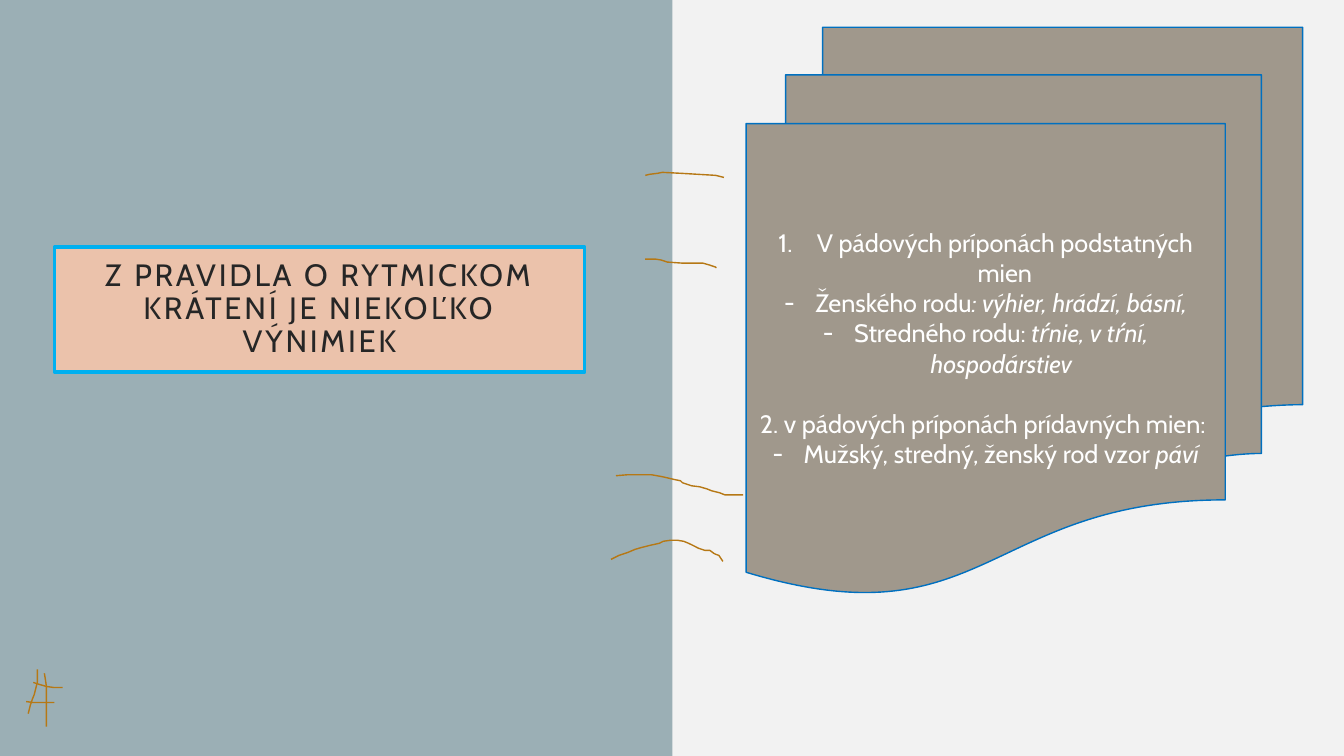
from pptx import Presentation
from pptx.dml.color import RGBColor
from pptx.enum.shapes import MSO_SHAPE as SHAPE
from pptx.enum.text import MSO_ANCHOR as ANCHOR, PP_ALIGN as ALIGN
from pptx.oxml.ns import qn
from pptx.util import Inches, Pt
from lxml import etree

PAPER = RGBColor(0xF2, 0xF2, 0xF2)
PANEL = RGBColor(0x9B, 0xAF, 0xB5)
PEACH = RGBColor(0xEB, 0xC2, 0xAB)
CYAN = RGBColor(0x00, 0xB0, 0xF0)
DARK = RGBColor(0x26, 0x26, 0x26)
TAUPE = RGBColor(0xA0, 0x98, 0x8C)
BLUE = RGBColor(0x00, 0x70, 0xC0)
WHITE = RGBColor(0xFF, 0xFF, 0xFF)
INK = RGBColor(0xB6, 0x78, 0x15)
FONT = "Cabin"

TITLE = "Z PRAVIDLA O RYTMICKOM KRÁTENÍ JE NIEKOĽKO VÝNIMIEK"

# Each rule: (text, italic) runs, bullet, hanging indent, space before in points
RULES = [
    ([("V pádových príponách podstatných mien", False)], "1.", 0.38, 0),
    ([("Ženského rodu", False), (": výhier, hrádzí, básní,", True)], "-", 0.31, 0),
    ([("Stredného rodu: ", False), ("tŕnie, v tŕní, hospodárstiev", True)], "-", 0.31, 0),
    ([("2. v pádových príponách prídavných mien: ", False)], None, 0, 21.6),
    ([("Mužský, stredný, ženský rod vzor ", False), ("páví", True)], "-", 0.31, 0),
]

# Pen strokes as points in hundredths of an inch from the corner of their region
LINKS = [
    [(34, 3), (38, 2), (46, 1), (51, 0), (70, 1), (104, 3), (112, 5)],
    [(34, 86), (44, 86), (50, 87), (56, 89), (70, 90), (91, 90), (98, 92),
     (101, 93), (104, 94), (104, 95)],
    [(0, 384), (8, 380), (17, 377), (24, 374), (31, 372), (39, 370), (48, 368),
     (52, 366), (59, 365), (66, 365), (72, 366), (77, 368), (81, 370), (87, 373),
     (93, 375), (98, 375), (102, 378), (104, 379), (107, 380), (111, 386)],
    [(5, 301), (17, 300), (29, 300), (40, 300), (51, 302), (64, 305), (69, 306),
     (71, 308), (74, 309), (80, 311), (88, 312), (95, 314), (100, 316),
     (108, 318), (113, 320), (120, 320), (131, 320)],
]
HASH = [
    [(11, 0), (11, 13), (8, 25), (6, 30), (4, 36), (3, 40), (2, 44)],
    [(18, 4), (19, 10), (20, 17), (20, 57)],
    [(7, 13), (13, 15), (20, 17), (27, 18), (36, 18)],
    [(0, 32), (7, 33), (28, 33)],
]


def add_box(s, kind, box, fill, line=None, width=1):
    sp = s.shapes.add_shape(kind, *map(Inches, box))
    sp.shadow.inherit = False
    sp.fill.solid()
    sp.fill.fore_color.rgb = fill
    if line is None:
        sp.line.fill.background()
    else:
        sp.line.color.rgb = line
        sp.line.width = Pt(width)
    sp.text_frame.word_wrap = True
    sp.text_frame.vertical_anchor = ANCHOR.MIDDLE
    return sp


def add_text(p, text, size=18, color=WHITE, italic=False, spacing=0):
    r = p.add_run()
    r.text = text
    r.font.name = FONT
    r.font.size = Pt(size)
    r.font.color.rgb = color
    r.font.italic = italic
    if spacing:
        r._r.get_or_add_rPr().set("spc", str(spacing * 100))


def set_bullet(p, bullet, indent):
    pPr = p._p.get_or_add_pPr()
    pPr.set("marL", str(Inches(indent)))
    pPr.set("indent", str(-Inches(indent)))
    if bullet == "1.":
        etree.SubElement(pPr, qn("a:buFont"), typeface="+mj-lt")
        etree.SubElement(pPr, qn("a:buAutoNum"), type="arabicPeriod")
    else:
        etree.SubElement(pPr, qn("a:buFont"), typeface=FONT)
        etree.SubElement(pPr, qn("a:buChar"), char=bullet)


def add_title(s, box):
    tf = add_box(s, SHAPE.RECTANGLE, box, PEACH, CYAN, 2.5).text_frame
    tf.margin_left = tf.margin_right = tf.margin_top = tf.margin_bottom = Inches(0.2)
    p = tf.paragraphs[0]
    p.alignment = ALIGN.CENTER
    p.line_spacing = 0.9
    add_text(p, TITLE, size=22, color=DARK, spacing=2)


def add_rules(s, box):
    tf = add_box(s, SHAPE.FLOWCHART_MULTIDOCUMENT, box, TAUPE, BLUE).text_frame
    for i, (runs, bullet, indent, before) in enumerate(RULES):
        p = tf.add_paragraph() if i else tf.paragraphs[0]
        p.alignment = ALIGN.CENTER
        p.space_before = Pt(before)
        if bullet:
            set_bullet(p, bullet, indent)
        for text, italic in runs:
            add_text(p, text, italic=italic)


def add_strokes(s, left, top, strokes):
    """Draw open pen strokes relative to the corner of their region."""
    for start, *rest in strokes:
        fb = s.shapes.build_freeform(*start, scale=Inches(0.01))
        fb.add_line_segments(rest, close=False)
        sp = fb.convert_to_shape(Inches(left), Inches(top))
        sp.shadow.inherit = False
        sp.fill.background()
        sp.line.color.rgb = INK
        sp.line.width = Pt(1)


def main():
    prs = Presentation()
    prs.slide_width, prs.slide_height = Inches(13.33), Inches(7.5)
    s = prs.slides.add_slide(prs.slide_layouts[6])
    s.background.fill.solid()
    s.background.fill.fore_color.rgb = PAPER

    add_box(s, SHAPE.RECTANGLE, (0, 0, 6.67, 7.5), PANEL)
    add_title(s, (0.54, 2.45, 5.26, 1.24))
    add_strokes(s, 6.06, 1.71, LINKS)
    add_rules(s, (7.4, 0.27, 5.52, 5.62))
    add_strokes(s, 0.26, 6.64, HASH)
    prs.save("out.pptx")


if __name__ == "__main__":
    main()
